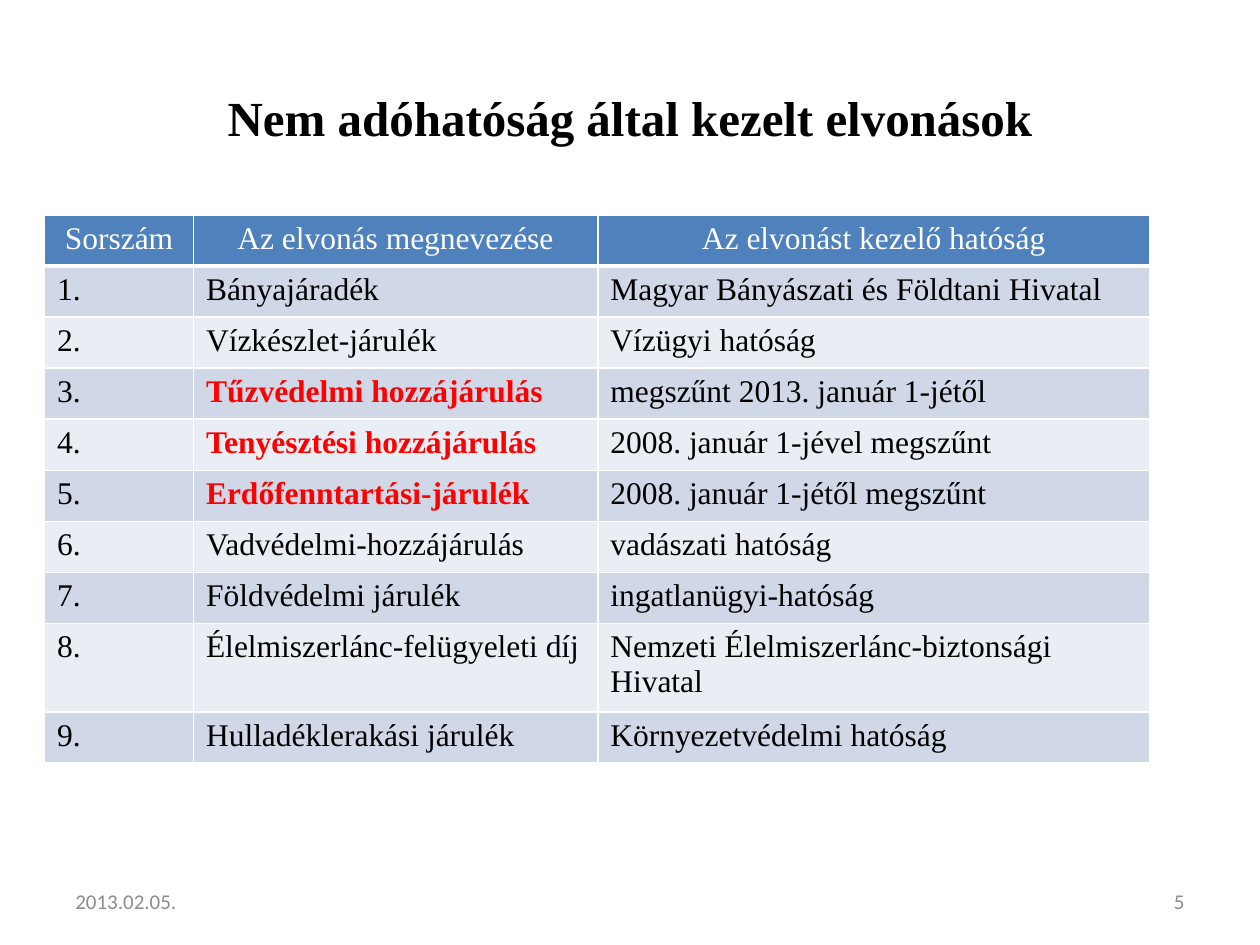
from lxml import etree
from pptx import Presentation
from pptx import util as u
from pptx.dml.color import RGBColor
from pptx.enum import text
from pptx.oxml import ns

COLORS = {
    "ink": "000000",
    "white": "FFFFFF",
    "abolished": "FF0000",
    "header": "4F81BD",
    "odd_row": "D0D8E8",
    "even_row": "E9EDF4",
    "footer": "8C8C8C",
}
SERIF, SANS = "Times New Roman", "Calibri"
ALIGN = text.PP_ALIGN

HEADINGS = ("Sorszám", "Az elvonás megnevezése", "Az elvonást kezelő hatóság")
LEVIES = [
    ("Bányajáradék", "Magyar Bányászati és Földtani Hivatal"),
    ("Vízkészlet-járulék", "Vízügyi hatóság"),
    ("Tűzvédelmi hozzájárulás", "megszűnt 2013. január 1-jétől"),
    ("Tenyésztési hozzájárulás", "2008. január 1-jével megszűnt"),
    ("Erdőfenntartási-járulék", "2008. január 1-jétől megszűnt"),
    ("Vadvédelmi-hozzájárulás", "vadászati hatóság"),
    ("Földvédelmi járulék", "ingatlanügyi-hatóság"),
    ("Élelmiszerlánc-felügyeleti díj", "Nemzeti Élelmiszerlánc-biztonsági Hivatal"),
    ("Hulladéklerakási járulék", "Környezetvédelmi hatóság"),
]
COLUMN_WIDTHS = (3.0, 8.15, 11.13)
ROW_HEIGHT = 1.03


def rgb(name):
    return RGBColor.from_string(COLORS[name])


def add_run(frame, words, size, font, color, bold=False, align=ALIGN.LEFT):
    paragraph = frame.paragraphs[0]
    paragraph.alignment = align
    run = paragraph.add_run()
    run.text = words
    run.font.size = u.Pt(size)
    run.font.name = font
    run.font.bold = bold
    run.font.color.rgb = rgb(color)


def add_label(slide, box, words, **style):
    label = slide.shapes.add_textbox(*(u.Cm(length) for length in box))
    label.text_frame.word_wrap = True
    label.text_frame.vertical_anchor = text.MSO_ANCHOR.MIDDLE
    add_run(label.text_frame, words, **style)


def set_borders(cell, bottom_width):
    """Draw white lines on all four sides; they precede the fill in tcPr."""
    properties = cell._tc.get_or_add_tcPr()
    widths = {"lnL": 1, "lnR": 1, "lnT": 1, "lnB": bottom_width}
    for position, (side, width) in enumerate(widths.items()):
        line = etree.Element(ns.qn(f"a:{side}"), w=str(u.Pt(width)))
        fill = etree.SubElement(line, ns.qn("a:solidFill"))
        etree.SubElement(fill, ns.qn("a:srgbClr"), val=COLORS["white"])
        properties.insert(position, line)


def fill_cell(cell, words, fill, color="ink", bold=False, align=ALIGN.LEFT, bottom_width=1):
    cell.fill.solid()
    cell.fill.fore_color.rgb = rgb(fill)
    set_borders(cell, bottom_width)
    add_run(cell.text_frame, words, 18, SERIF, color, bold, align)


def add_levy_table(slide):
    row_count = len(LEVIES) + 1
    table = slide.shapes.add_table(
        row_count, len(HEADINGS), u.Cm(0.9), u.Cm(4.33),
        u.Cm(sum(COLUMN_WIDTHS)), u.Cm(ROW_HEIGHT * row_count),
    ).table
    for column, width in zip(table.columns, COLUMN_WIDTHS):
        column.width = u.Cm(width)
    for row in table.rows:
        row.height = u.Cm(ROW_HEIGHT)

    # Header row
    for column, heading in enumerate(HEADINGS):
        fill_cell(table.cell(0, column), heading, "header", "white",
                  align=ALIGN.CENTER, bottom_width=3)

    # Numbered levies, the abolished ones in bold red
    for number, (levy, authority) in enumerate(LEVIES, start=1):
        fill = "odd_row" if number % 2 else "even_row"
        abolished = "megszűnt" in authority
        fill_cell(table.cell(number, 0), f"{number}.", fill)
        fill_cell(table.cell(number, 1), levy, fill,
                  "abolished" if abolished else "ink", abolished)
        fill_cell(table.cell(number, 2), authority, fill)


def main():
    deck = Presentation()
    deck.slide_width, deck.slide_height = u.Cm(25.4), u.Cm(19.05)
    slide = deck.slides.add_slide(deck.slide_layouts[6])

    # Title
    add_label(slide, (1.27, 0.76, 22.86, 3.18), "Nem adóhatóság által kezelt elvonások",
              size=28, font=SERIF, color="ink", bold=True, align=ALIGN.CENTER)

    # Table of levies
    add_levy_table(slide)

    # Footer: date and page number
    footer = {"size": 12, "font": SANS, "color": "footer"}
    add_label(slide, (1.27, 17.65, 5.92, 1.02), "2013.02.05.", **footer)
    add_label(slide, (18.21, 17.65, 5.92, 1.02), "5", align=ALIGN.RIGHT, **footer)

    deck.save("out.pptx")


if __name__ == "__main__":
    main()
